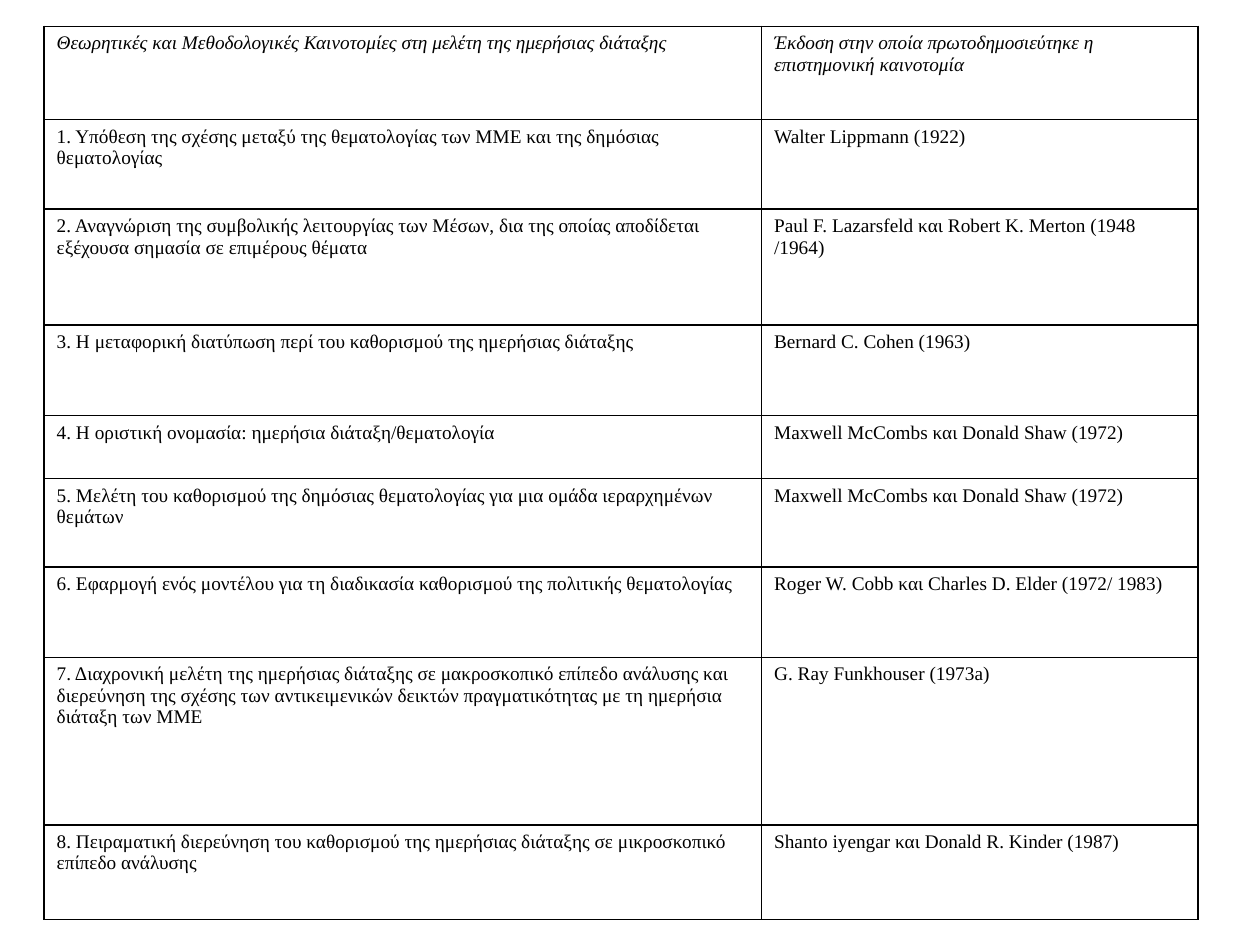
import pptx
import pptx.dml.color
import pptx.oxml
import pptx.oxml.ns
import pptx.util
from pptx.util import Inches

COLORS = {"ink": "000000", "paper": "FFFFFF"}
FONT = "Times New Roman"
COLUMN_WIDTHS = [5.7, 3.47]
ROW_HEIGHTS = [0.74, 0.71, 0.92, 0.72, 0.5, 0.7, 0.72, 1.33, 0.75]
HEADER = (
    "Θεωρητικές και Μεθοδολογικές Καινοτομίες στη μελέτη της ημερήσιας διάταξης",
    "Έκδοση στην οποία πρωτοδημοσιεύτηκε η επιστημονική καινοτομία",
)
INNOVATIONS = [
    ("1. Υπόθεση της σχέσης μεταξύ της θεματολογίας των ΜΜΕ και της δημόσιας θεματολογίας",
     "Walter Lippmann (1922)"),
    ("2. Αναγνώριση της συμβολικής λειτουργίας των Μέσων, δια της οποίας αποδίδεται "
     "εξέχουσα σημασία σε επιμέρους θέματα",
     "Paul F. Lazarsfeld και Robert Κ. Merton (1948 /1964)"),
    ("3. Η μεταφορική διατύπωση περί του καθορισμού της ημερήσιας διάταξης",
     "Bernard C. Cohen (1963)"),
    ("4. Η οριστική ονομασία: ημερήσια διάταξη/θεματολογία",
     "Maxwell McCombs και Donald Shaw (1972)"),
    ("5. Μελέτη του καθορισμού της δημόσιας θεματολογίας για μια ομάδα ιεραρχημένων θεμάτων",
     "Maxwell McCombs και Donald Shaw (1972)"),
    ("6. Εφαρμογή ενός μοντέλου για τη διαδικασία καθορισμού της πολιτικής θεματολογίας",
     "Roger W. Cobb και Charles D. Elder (1972/ 1983)"),
    ("7. Διαχρονική μελέτη της ημερήσιας διάταξης σε μακροσκοπικό επίπεδο ανάλυσης και "
     "διερεύνηση της σχέσης των αντικειμενικών δεικτών πραγματικότητας με τη ημερήσια "
     "διάταξη των ΜΜΕ",
     "G. Ray Funkhouser (1973a)"),
    ("8. Πειραματική διερεύνηση του καθορισμού της ημερήσιας διάταξης σε μικροσκοπικό "
     "επίπεδο ανάλυσης",
     "Shanto iyengar και Donald R. Kinder (1987)"),
]


def rgb(name):
    return pptx.dml.color.RGBColor.from_string(COLORS[name])


def write_text(tf, text, size=11, italic=False, color="ink"):
    tf.word_wrap = True
    r = tf.paragraphs[0].add_run()
    r.text = text
    r.font.name = FONT
    r.font.size = pptx.util.Pt(size)
    r.font.bold = False
    r.font.italic = italic
    r.font.color.rgb = rgb(color)


def add_borders(cell, width=1, color="ink"):
    tc_pr = cell._tc.get_or_add_tcPr()
    for side in ("lnL", "lnR", "lnT", "lnB"):
        tc_pr.append(pptx.oxml.parse_xml(
            f'<a:{side} {pptx.oxml.ns.nsdecls("a")} w="{pptx.util.Pt(width)}">'
            f'<a:solidFill><a:srgbClr val="{COLORS[color]}"/></a:solidFill></a:{side}>'
        ))


def add_innovations_table(s, left, top, width, height):
    rows = [HEADER] + INNOVATIONS
    table = s.shapes.add_table(
        len(rows), len(HEADER), Inches(left), Inches(top), Inches(width), Inches(height)
    ).table
    for column, share in zip(table.columns, COLUMN_WIDTHS):
        column.width = Inches(width * share / sum(COLUMN_WIDTHS))
    for row, share in zip(table.rows, ROW_HEIGHTS):
        row.height = Inches(height * share / sum(ROW_HEIGHTS))
    for i, texts in enumerate(rows):
        for j, text in enumerate(texts):
            cell = table.cell(i, j)
            add_borders(cell)
            cell.fill.solid()
            cell.fill.fore_color.rgb = rgb("paper")
            write_text(cell.text_frame, text, italic=i == 0)


def main():
    prs = pptx.Presentation()
    prs.slide_width = Inches(10)
    prs.slide_height = Inches(7.5)
    s = prs.slides.add_slide(prs.slide_layouts[6])
    add_innovations_table(s, 0.35, 0.21, 9.16, 7.09)
    prs.save("out.pptx")


if __name__ == "__main__":
    main()
